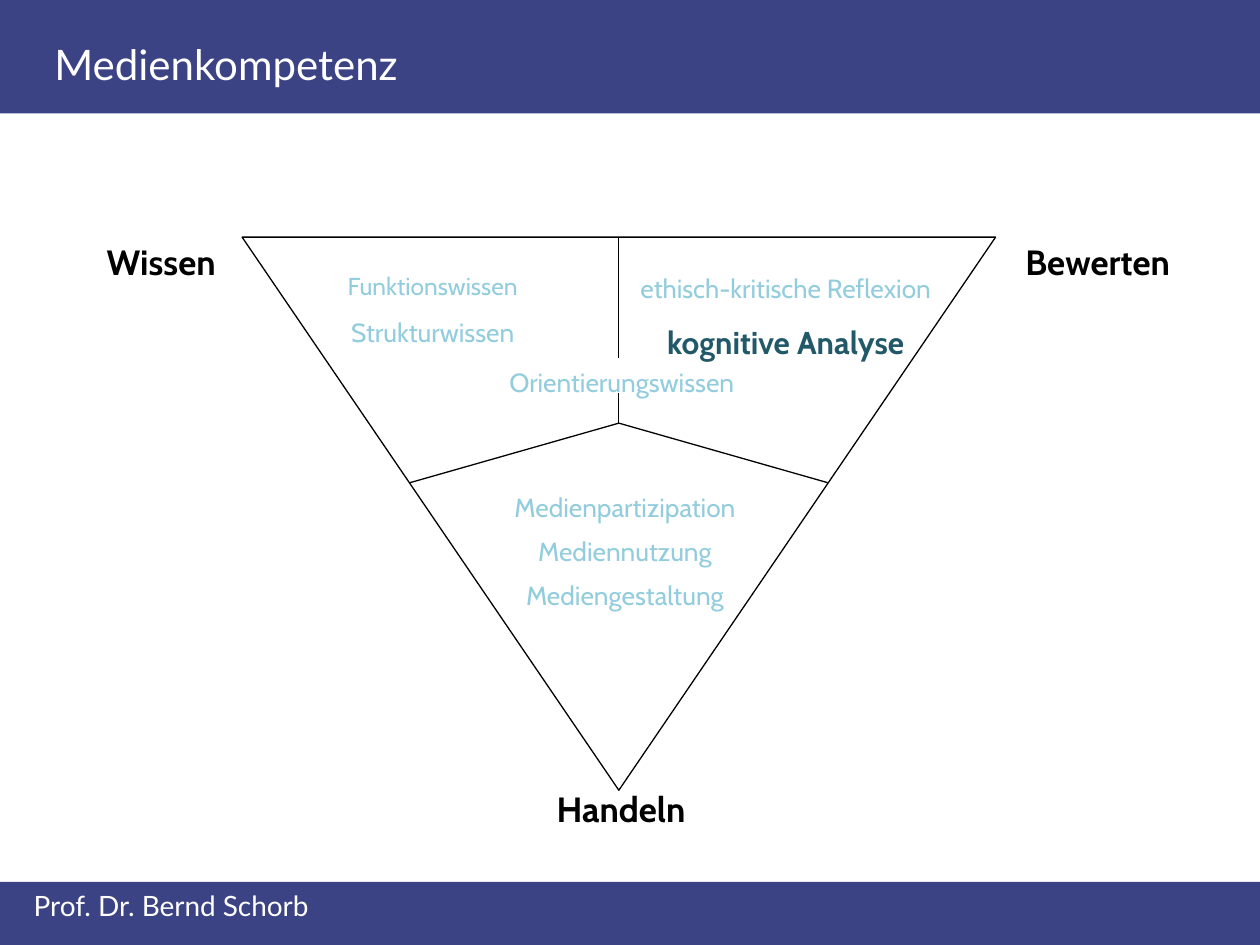
from dataclasses import dataclass

from lxml.etree import SubElement
from pptx import Presentation
from pptx.dml.color import RGBColor
from pptx.enum.shapes import MSO_CONNECTOR, MSO_SHAPE
from pptx.enum.text import MSO_ANCHOR, MSO_AUTO_SIZE, PP_ALIGN
from pptx.oxml.ns import qn
from pptx.util import Cm, Pt


@dataclass(frozen=True)
class Theme:
    band: str = "3C4384"
    white: str = "FFFFFF"
    ink: str = "000000"
    pale: str = "93CDDD"
    deep: str = "215968"
    head: str = "Lato"
    body: str = "Cabin"
    title: int = 24
    label: int = 20
    key: int = 18
    foot: int = 16
    item: int = 15
    small: int = 14
    rule: float = 0.75


T = Theme()
WIDE, HIGH = 25.4, 19.05
LEFT, MID, RIGHT = PP_ALIGN.LEFT, PP_ALIGN.CENTER, PP_ALIGN.RIGHT

# Text styles: font, size, colour, bold
TITLE = (T.head, T.title, T.white, False)
FOOT = (T.head, T.foot, T.white, False)
LABEL = (T.body, T.label, T.ink, True)
ITEM = (T.body, T.item, T.pale, False)
SMALL = (T.body, T.small, T.pale, False)
KEY = (T.body, T.key, T.deep, True)

# Bands: top, height
HEAD_BAND = (0, 2.29)
FOOT_BAND = (17.78, 1.27)

# Texts: box (left, top, width, height), line spacing, wrap, lines
TITLE_BOX = (0.84, 0.64, 18.64, 1.27)
LABELS = [
    ((1.9, 4.72, 2.79, 1.12), 1, False, [("Wissen", LABEL)]),
    ((20.42, 4.72, 3.73, 1.12), 1, False, [("Bewerten", LABEL)]),
    ((10.97, 15.75, 3.3, 1.09), 1, False, [("Handeln", LABEL)]),
    ((0.43, 17.78, 24.56, 0.94), 1, True, [("Prof. Dr. Bernd Schorb", FOOT)]),
]
FIELDS = [
    ((9.96, 9.52, 5.28, 2.95), 1.4, False, [
        ("Medienpartizipation", ITEM),
        ("Mediennutzung", ITEM),
        ("Mediengestaltung", ITEM),
    ]),
    ((6.68, 5.05, 4.09, 2.11), 1.5, False, [
        ("Funktionswissen", SMALL),
        ("Strukturwissen", ITEM),
    ]),
    ((12.4, 5.05, 6.88, 2.36), 1.5, False, [
        ("ethisch-kritische Reflexion", ITEM),
        ("kognitive Analyse", KEY),
    ]),
    ((9.88, 7.26, 5.31, 1.09), 1, False, [("Orientierungswissen", ITEM)]),
]

# Triangle, and the hub where its three fields meet
TRI = (4.88, 4.78, 15.19, 11.15)
AXIS = TRI[0] + TRI[2] / 2
HUB, SIDE, REACH = 8.53, 9.73, 4.21
GAP = (7.21, 7.92)
RULES = [
    (AXIS, TRI[1], AXIS, GAP[0]),
    (AXIS, GAP[1], AXIS, HUB),
    (AXIS, HUB, AXIS - REACH, SIDE),
    (AXIS, HUB, AXIS + REACH, SIDE),
]


def color(code):
    return RGBColor.from_string(code)


def stroke(line):
    line.color.rgb = color(T.ink)
    line.width = Pt(T.rule)


def band(slide, top, high):
    bar = slide.shapes.add_shape(
        MSO_SHAPE.RECTANGLE, 0, Cm(top), Cm(WIDE), Cm(high))
    bar.shadow.inherit = False
    bar.fill.solid()
    bar.fill.fore_color.rgb = color(T.band)
    bar.line.fill.background()
    return bar


def write(frame, lines, space, align, wrap):
    frame.word_wrap = wrap
    frame.auto_size = MSO_AUTO_SIZE.NONE
    frame.vertical_anchor = MSO_ANCHOR.TOP
    for i, (text, style) in enumerate(lines):
        para = frame.add_paragraph() if i else frame.paragraphs[0]
        para.alignment = align
        para.line_spacing = space
        run = para.add_run()
        run.text = text
        font = run.font
        font.name, size, code, font.bold = style
        font.size = Pt(size)
        font.color.rgb = color(code)


def head(slide):
    """Place the title on its band."""
    title = slide.shapes.title
    title.left, title.top, title.width, title.height = map(Cm, TITLE_BOX)
    write(title.text_frame, [("Medienkompetenz", TITLE)], 1, LEFT, True)
    title.element.addprevious(band(slide, *HEAD_BAND).element)


def draw(slide):
    """Draw the triangle and the rules that split it."""
    tri = slide.shapes.add_shape(
        MSO_SHAPE.ISOSCELES_TRIANGLE, *map(Cm, TRI))
    tri.rotation = 180
    tri.shadow.inherit = False
    tri.fill.background()
    stroke(tri.line)
    for ends in RULES:
        rule = slide.shapes.add_connector(
            MSO_CONNECTOR.STRAIGHT, *map(Cm, ends))
        stroke(rule.line)
        SubElement(rule.element.spPr, qn("a:effectLst"))


def main():
    deck = Presentation()
    deck.slide_width, deck.slide_height = Cm(WIDE), Cm(HIGH)
    slide = deck.slides.add_slide(deck.slide_layouts[5])
    head(slide)
    band(slide, *FOOT_BAND)
    draw(slide)
    for group, align in ((LABELS, LEFT), (FIELDS, MID)):
        for box, space, wrap, lines in group:
            frame = slide.shapes.add_textbox(*map(Cm, box)).text_frame
            write(frame, lines, space, align, wrap)
    deck.save("out.pptx")


if __name__ == "__main__":
    main()
